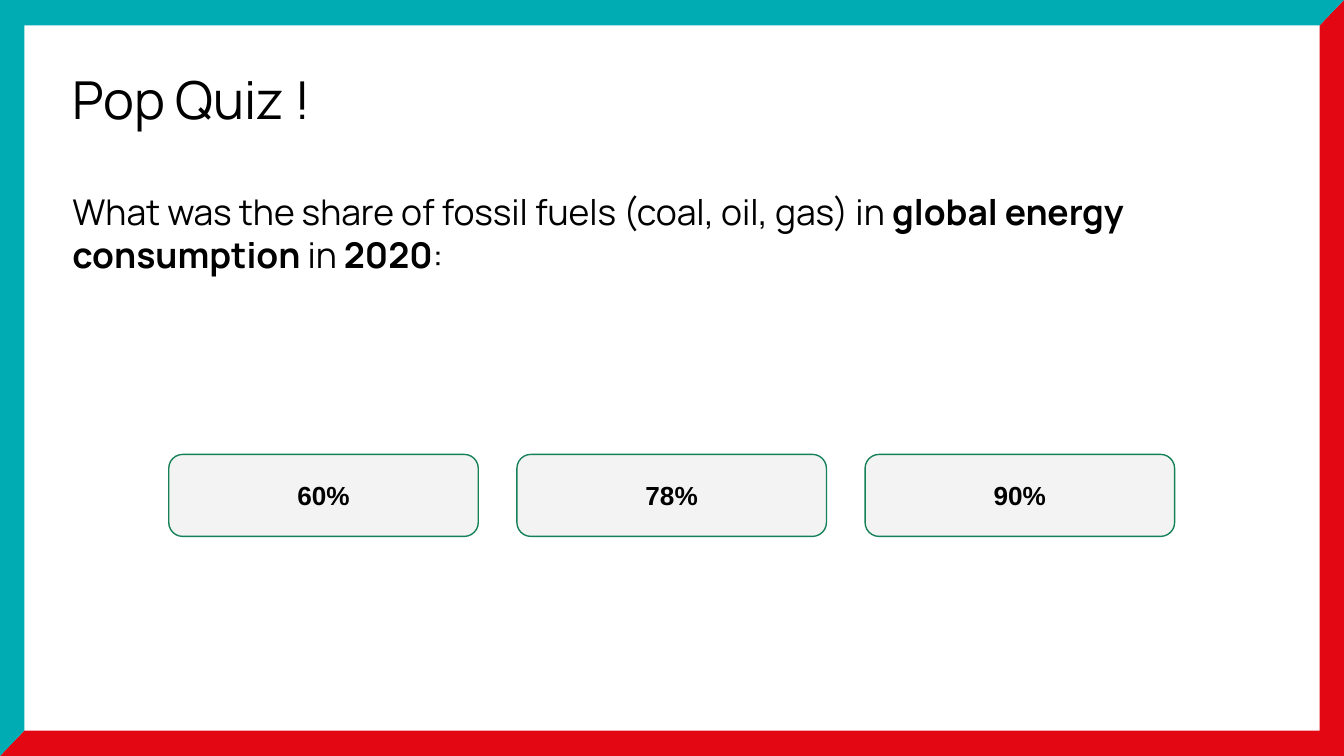
from dataclasses import dataclass

from pptx import Presentation
from pptx.dml.color import RGBColor
from pptx.enum.shapes import MSO_SHAPE
from pptx.enum.text import MSO_ANCHOR, MSO_AUTO_SIZE, PP_ALIGN
from pptx.util import Cm, Pt

ROUNDED = MSO_SHAPE.ROUNDED_RECTANGLE
MIDDLE = MSO_ANCHOR.MIDDLE
TOP = MSO_ANCHOR.TOP
GROW = MSO_AUTO_SIZE.SHAPE_TO_FIT_TEXT
CENTER = PP_ALIGN.CENTER
LEFT = PP_ALIGN.LEFT

PAGE_WIDTH, PAGE_HEIGHT = 25.4, 14.29
FRAME_SIDE, FRAME_EDGE = 0.46, 0.48
TEXT_INSET = 0.25
TEAL, RED, GREEN = "00ACB3", "E30613", "158158"
BLACK, PALE_GRAY = "000000", "F3F3F3"

ANSWER_LEFT, ANSWER_TOP, ANSWER_STEP = 3.19, 8.59, 6.58
ANSWER_WIDTH, ANSWER_HEIGHT = 5.85, 1.55


@dataclass(frozen=True)
class Span:
    text: str
    bold: bool = False


@dataclass(frozen=True)
class TextBlock:
    left: float
    top: float
    width: float
    height: float
    size: int
    spans: tuple[Span, ...]


TEXT_BLOCKS = (
    TextBlock(1.12, 1.02, 11.79, 1.7, 28, (Span("Pop Quiz !"),)),
    TextBlock(1.12, 3.35, 22.45, 2.13, 19, (
        Span("What was the share of fossil fuels (coal, oil, gas) in "),
        Span("global energy consumption", True),
        Span(" in "),
        Span("2020", True),
        Span(":"),
    )),
)
ANSWERS = ("60%", "78%", "90%")


def color(value: str) -> RGBColor:
    return RGBColor.from_string(value)


def write(box, spans: tuple[Span, ...], font: str, size: int, align, anchor) -> None:
    frame = box.text_frame
    frame.word_wrap = True
    frame.vertical_anchor = anchor
    frame.margin_left = frame.margin_right = Cm(TEXT_INSET)
    frame.margin_top = frame.margin_bottom = Cm(TEXT_INSET)
    para = frame.paragraphs[0]
    para.alignment = align
    for span in spans:
        run = para.add_run()
        run.text = span.text
        run.font.name = font
        run.font.size = Pt(size)
        run.font.bold = span.bold
        run.font.color.rgb = color(BLACK)


def draw_frame_half(page, points: list[tuple[float, float]], fill: str) -> None:
    corners = [(Cm(x), Cm(y)) for x, y in points]
    builder = page.shapes.build_freeform(*corners[0])
    builder.add_line_segments(corners[1:], close=True)
    half = builder.convert_to_shape()
    half.shadow.inherit = False
    half.fill.solid()
    half.fill.fore_color.rgb = color(fill)
    half.line.fill.background()


def draw_frame(page) -> None:
    right, bottom = PAGE_WIDTH - FRAME_SIDE, PAGE_HEIGHT - FRAME_EDGE
    top_right, bottom_left = (PAGE_WIDTH, 0), (0, PAGE_HEIGHT)
    inner_ends = [(FRAME_SIDE, bottom), (right, FRAME_EDGE)]
    draw_frame_half(page, [top_right, (PAGE_WIDTH, PAGE_HEIGHT), bottom_left,
                           inner_ends[0], (right, bottom), inner_ends[1]], RED)
    draw_frame_half(page, [bottom_left, (0, 0), top_right,
                           inner_ends[1], (FRAME_SIDE, FRAME_EDGE), inner_ends[0]], TEAL)


def draw_text(page, block: TextBlock) -> None:
    box = page.shapes.add_textbox(
        Cm(block.left), Cm(block.top), Cm(block.width), Cm(block.height))
    write(box, block.spans, "Manrope", block.size, LEFT, TOP)
    box.text_frame.auto_size = GROW


def draw_answer(page, left: float, label: str) -> None:
    button = page.shapes.add_shape(
        ROUNDED, Cm(left), Cm(ANSWER_TOP), Cm(ANSWER_WIDTH), Cm(ANSWER_HEIGHT))
    button.shadow.inherit = False
    button.adjustments[0] = 0.17
    button.fill.solid()
    button.fill.fore_color.rgb = color(PALE_GRAY)
    button.line.color.rgb = color(GREEN)
    button.line.width = Pt(0.75)
    write(button, (Span(label, True),), "Arial", 14, CENTER, MIDDLE)


def main() -> None:
    deck = Presentation()
    deck.slide_width, deck.slide_height = Cm(PAGE_WIDTH), Cm(PAGE_HEIGHT)
    page = deck.slides.add_slide(deck.slide_layouts[6])
    draw_frame(page)
    for block in TEXT_BLOCKS:
        draw_text(page, block)
    for index, label in enumerate(ANSWERS):
        draw_answer(page, ANSWER_LEFT + index * ANSWER_STEP, label)
    deck.save("out.pptx")


if __name__ == "__main__":
    main()
